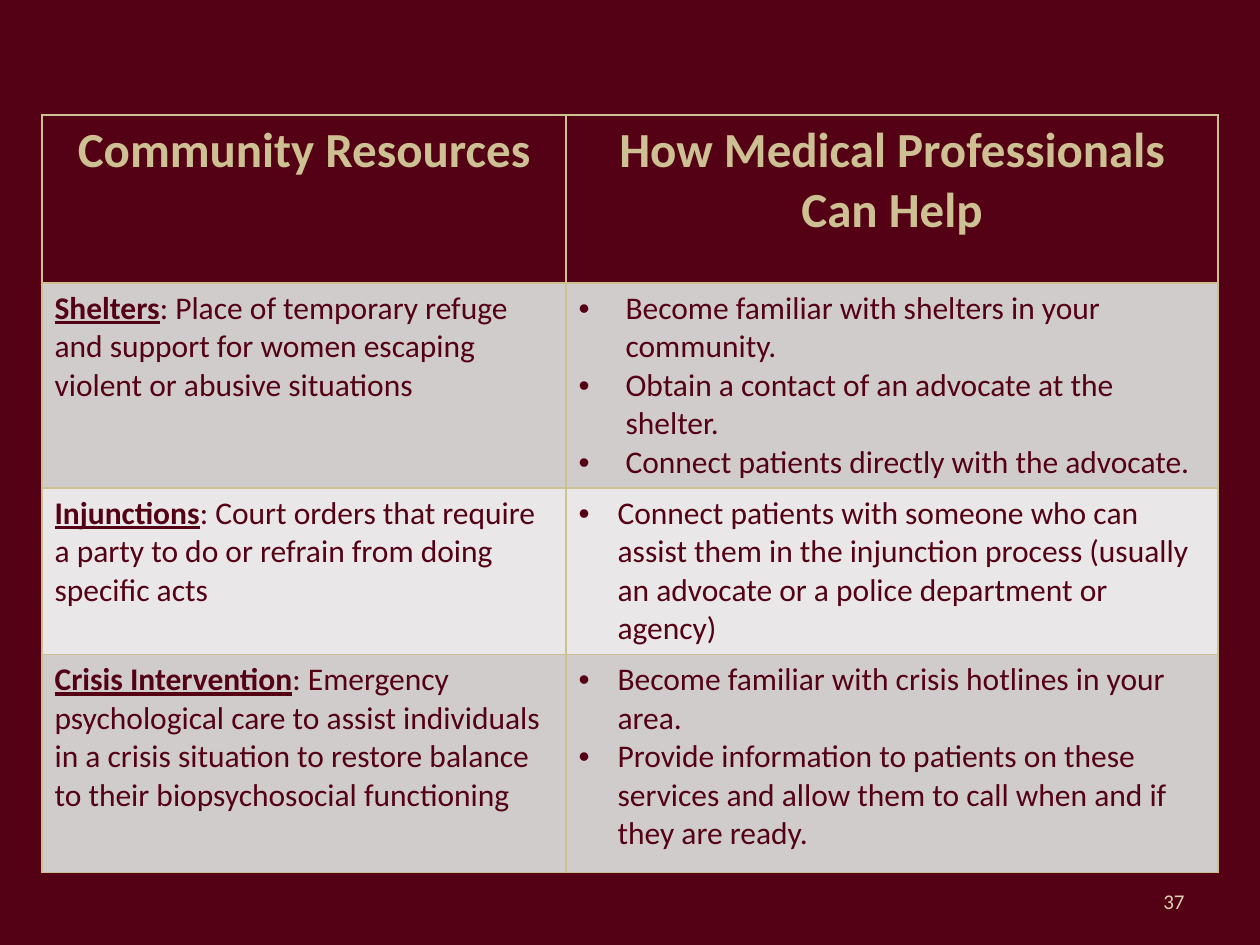
from pptx import Presentation
from pptx.dml.color import RGBColor
from pptx.enum.text import MSO_ANCHOR, PP_ALIGN
from pptx.oxml.ns import qn
from pptx.util import Emu, Pt
from lxml import etree

CENTER, LEFT, RIGHT = PP_ALIGN.CENTER, PP_ALIGN.LEFT, PP_ALIGN.RIGHT
MIDDLE = MSO_ANCHOR.MIDDLE
PX_PER_INCH = 126
FONT = "Calibri"
COLORS = {
    "maroon": "540115",
    "gold": "CDC092",
    "pale_gold": "DBD2B6",
    "band_dark": "D1CCCC",
    "band_light": "E9E7E8",
}
COLUMN_WIDTHS = [524, 652]
ROW_HEIGHTS = [168, 205, 166, 218]
HEADINGS = ["Community Resources", "How Medical Professionals Can Help"]

# Each resource: term, definition, bullet indent in px, ways to help
RESOURCES = [
    ("Shelters",
     ": Place of temporary refuge and support for women escaping violent or abusive situations",
     47,
     ["Become familiar with shelters in your community.",
      "Obtain a contact of an advocate at the shelter.",
      "Connect patients directly with the advocate."]),
    ("Injunctions",
     ": Court orders that require a party to do or refrain from doing specific acts",
     39,
     ["Connect patients with someone who can assist them in the injunction process "
      "(usually an advocate or a police department or agency)"]),
    ("Crisis Intervention",
     ": Emergency psychological care to assist individuals in a crisis situation "
     "to restore balance to their biopsychosocial functioning",
     39,
     ["Become familiar with crisis hotlines in your area.",
      "Provide information to patients on these services and allow them to call "
      "when and if they are ready."]),
]


def px(length):
    return Emu(round(length * 914400 / PX_PER_INCH))


def rgb(name):
    return RGBColor.from_string(COLORS[name])


def write(paragraph, text, size=18, color="maroon", bold=False, underline=False, align=LEFT):
    paragraph.alignment = align
    run = paragraph.add_run()
    run.text = text
    run.font.name = FONT
    run.font.size = Pt(size)
    run.font.bold = bold
    run.font.underline = underline
    run.font.color.rgb = rgb(color)


def add_bullet(paragraph, indent):
    properties = paragraph._p.get_or_add_pPr()
    properties.set("marL", str(px(indent)))
    properties.set("indent", str(-px(indent)))
    etree.SubElement(properties, qn("a:buFont")).set("typeface", "Arial")
    etree.SubElement(properties, qn("a:buChar")).set("char", "•")


def style_cell(cell, fill):
    # Borders come before the fill in the cell properties
    properties = cell._tc.get_or_add_tcPr()
    for side in ("lnL", "lnR", "lnT", "lnB"):
        border = etree.SubElement(properties, qn(f"a:{side}"), w=str(Pt(1)))
        solid = etree.SubElement(border, qn("a:solidFill"))
        etree.SubElement(solid, qn("a:srgbClr"), val=COLORS["gold"])
    cell.fill.solid()
    cell.fill.fore_color.rgb = rgb(fill)


def add_resource_table(slide, left, top):
    frame = slide.shapes.add_table(
        len(ROW_HEIGHTS), len(COLUMN_WIDTHS), px(left), px(top),
        px(sum(COLUMN_WIDTHS)), px(sum(ROW_HEIGHTS)))
    table = frame.table
    for column, width in zip(table.columns, COLUMN_WIDTHS):
        column.width = px(width)
    for row, height in zip(table.rows, ROW_HEIGHTS):
        row.height = px(height)

    # Header row
    for column, heading in enumerate(HEADINGS):
        cell = table.cell(0, column)
        style_cell(cell, "maroon")
        write(cell.text_frame.paragraphs[0], heading,
              size=28, color="gold", bold=True, align=CENTER)

    # Resource rows in alternating bands
    for row, (term, definition, indent, actions) in enumerate(RESOURCES, start=1):
        resource, help_cell = table.cell(row, 0), table.cell(row, 1)
        for cell in (resource, help_cell):
            style_cell(cell, "band_dark" if row % 2 else "band_light")
        description = resource.text_frame.paragraphs[0]
        write(description, term, bold=True, underline=True)
        write(description, definition)
        help_text = help_cell.text_frame
        for index, action in enumerate(actions):
            paragraph = help_text.add_paragraph() if index else help_text.paragraphs[0]
            write(paragraph, action)
            add_bullet(paragraph, indent)


def add_page_number(slide, left, top, width, height, number):
    text_frame = slide.shapes.add_textbox(px(left), px(top), px(width), px(height)).text_frame
    text_frame.word_wrap = True
    text_frame.vertical_anchor = MIDDLE
    write(text_frame.paragraphs[0], number, size=12, color="pale_gold", align=RIGHT)


def main():
    presentation = Presentation()
    presentation.slide_width = px(1260)
    presentation.slide_height = px(945)
    slide = presentation.slides.add_slide(presentation.slide_layouts[6])
    slide.background.fill.solid()
    slide.background.fill.fore_color.rgb = rgb("maroon")
    add_resource_table(slide, 42, 115)
    add_page_number(slide, 903, 876, 294, 50, "37")
    presentation.save("out.pptx")


if __name__ == "__main__":
    main()
